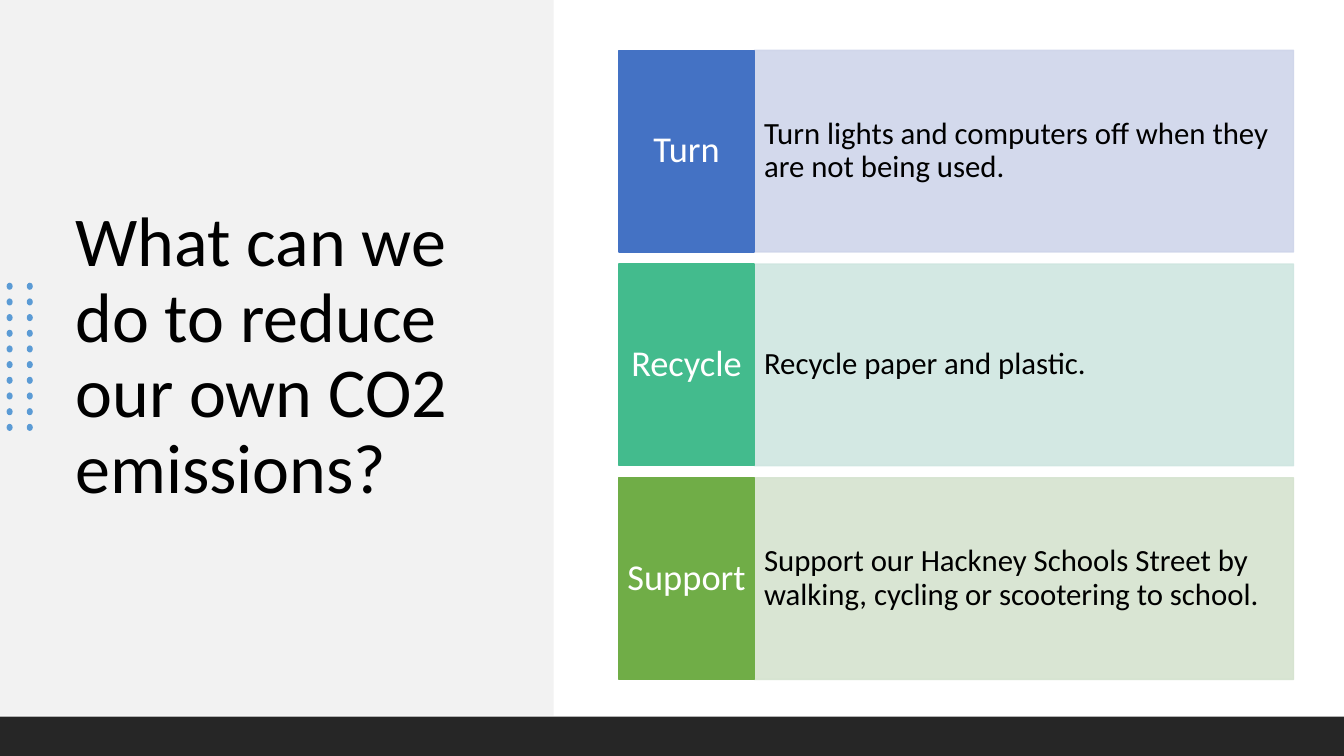
from lxml.etree import SubElement
from pptx import Presentation
from pptx.dml.color import RGBColor
from pptx.enum.shapes import MSO_SHAPE
from pptx.enum.text import MSO_ANCHOR, PP_ALIGN
from pptx.oxml.ns import qn
from pptx.util import Inches, Pt

COLORS = {
    "panel": "F2F2F2", "footer": "262626", "dot": "5B9BD5",
    "black": "000000", "white": "FFFFFF",
    "blue": "4472C4", "blue_pale": "CFD5EA",
    "teal": "43BB8D", "teal_pale": "CFE6E0",
    "green": "70AD47", "green_pale": "D5E3CF",
}

ACTIONS = [
    ("Turn", "Turn lights and computers off when they are not being used.", "blue"),
    ("Recycle", "Recycle paper and plastic.", "teal"),
    ("Support", "Support our Hackney Schools Street by walking, cycling or "
                "scootering to school.", "green"),
]


class SlideBuilder:
    font = "Calibri"
    line_spacing = 0.9

    def __init__(self, page):
        self.page = page

    def group(self):
        return self.page.shapes.add_group_shape().shapes

    def shape(self, left, top, width, height, color, kind=MSO_SHAPE.RECTANGLE,
              shapes=None, outlined=False, opacity=100):
        shapes = self.page.shapes if shapes is None else shapes
        shape = shapes.add_shape(kind, Inches(left), Inches(top),
                                 Inches(width), Inches(height))
        shape.shadow.inherit = False
        rgb = RGBColor.from_string(COLORS[color])
        shape.fill.solid()
        shape.fill.fore_color.rgb = rgb
        if outlined:
            shape.line.color.rgb = rgb
            shape.line.width = Pt(1)
        else:
            shape.line.fill.background()
        if opacity < 100:
            for tint in shape.element.spPr.iter(qn("a:srgbClr")):
                SubElement(tint, qn("a:alpha"), val=str(opacity * 1000))
        return shape

    def add_text(self, shape, text, size, color, align=PP_ALIGN.LEFT, inset=(0.1, 0.05)):
        """Fill a shape with one vertically centred paragraph."""
        frame = shape.text_frame
        frame.word_wrap = True
        frame.vertical_anchor = MSO_ANCHOR.MIDDLE
        frame.margin_left = frame.margin_right = Inches(inset[0])
        frame.margin_top = frame.margin_bottom = Inches(inset[1])
        para = frame.paragraphs[0]
        para.alignment = align
        para.line_spacing = self.line_spacing
        span = para.add_run()
        span.text = text
        span.font.name = self.font
        span.font.size = Pt(size)
        span.font.color.rgb = RGBColor.from_string(COLORS[color])

    def title(self, left, top, width, height, text):
        box = self.page.shapes.add_textbox(Inches(left), Inches(top),
                                           Inches(width), Inches(height))
        self.add_text(box, text, 50, "black")

    def dot_grid(self, left, top, columns, rows, column_step, row_step):
        dots = self.group()
        for row in range(rows):
            for column in range(columns):
                dot = self.shape(left + column * column_step, top + row * row_step,
                                 0.07, 0.06, "dot", MSO_SHAPE.OVAL, dots)
                dot.rotation = 90

    def action_rows(self, left, top, label_width, text_width, height, step):
        rows = self.group()
        for index, (label, text, color) in enumerate(ACTIONS):
            row_top = top + index * step
            detail = self.shape(left + label_width, row_top, text_width, height,
                                color + "_pale", shapes=rows, outlined=True, opacity=90)
            self.add_text(detail, text, 22, "black", inset=(0.1, 0.51))
            tile = self.shape(left, row_top, label_width, height, color,
                              shapes=rows, outlined=True)
            self.add_text(tile, label, 26, "white", PP_ALIGN.CENTER, (0.07, 0.2))


def main():
    deck = Presentation()
    deck.slide_width, deck.slide_height = Inches(13.33), Inches(7.5)
    builder = SlideBuilder(deck.slides.add_slide(deck.slide_layouts[6]))
    builder.shape(0, 0, 5.49, 7.1, "panel")
    builder.title(0.65, 1.32, 4.24, 4.45,
                  "What can we do to reduce our own CO2 emissions?")
    builder.dot_grid(0.06, 2.81, columns=2, rows=10, column_step=0.2, row_step=1.4 / 9)
    builder.shape(0, 7.11, 13.33, 0.39, "footer")
    builder.action_rows(6.14, 0.5, label_width=1.34, text_width=5.35,
                        height=2, step=2.12)
    deck.save("out.pptx")


if __name__ == "__main__":
    main()
